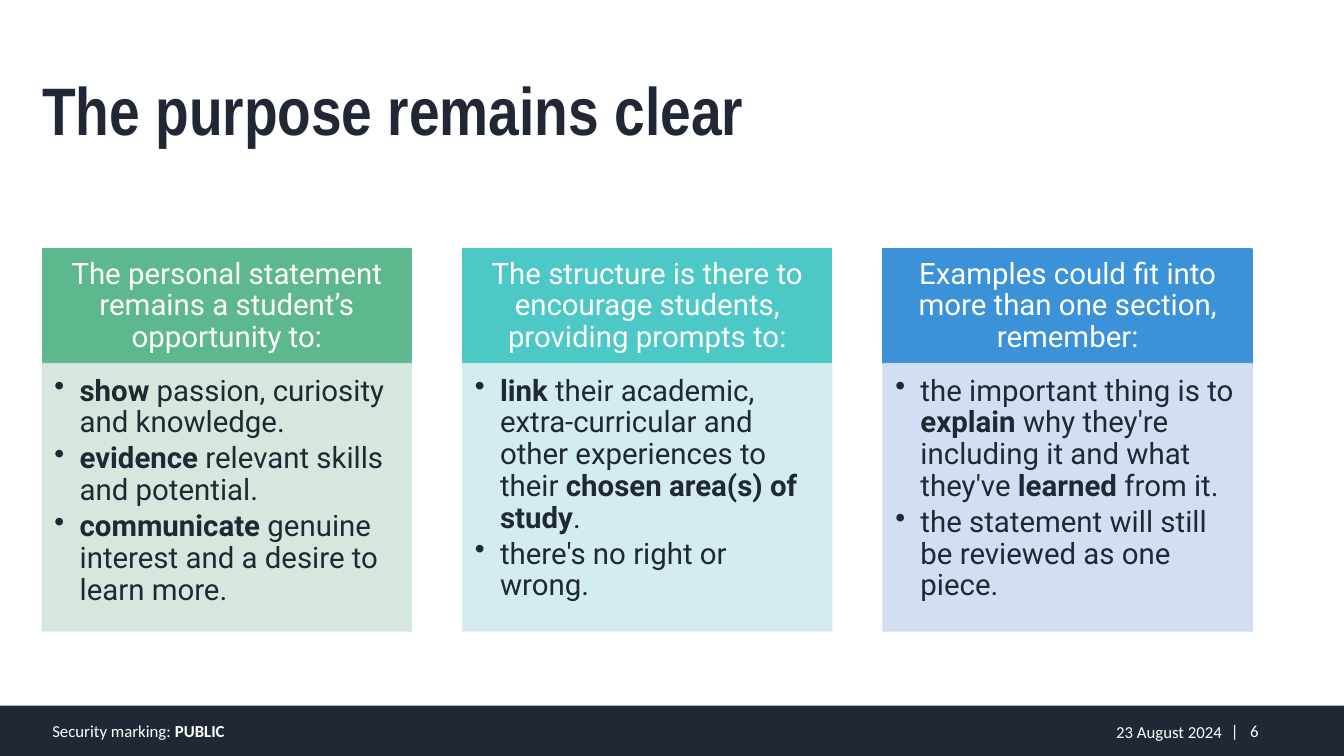
from lxml.etree import SubElement
from pptx import Presentation
from pptx.dml.color import RGBColor
from pptx.enum.shapes import MSO_SHAPE
from pptx.enum.text import MSO_ANCHOR, PP_ALIGN
from pptx.oxml.ns import qn
from pptx.util import Inches, Pt

NAVY = RGBColor(0x1F, 0x28, 0x34)
WHITE = RGBColor(0xFF, 0xFF, 0xFF)
GREEN = RGBColor(0x5D, 0xB8, 0x8D)
PALE_GREEN = RGBColor(0xD2, 0xE6, 0xDB)
TEAL = RGBColor(0x4C, 0xC8, 0xC7)
PALE_TEAL = RGBColor(0xD0, 0xEB, 0xEC)
BLUE = RGBColor(0x3B, 0x92, 0xD9)
PALE_BLUE = RGBColor(0xCE, 0xDC, 0xF1)

PAGE_WIDTH, PAGE_HEIGHT = 13.33, 7.5
MARGIN = 0.42
CARD_TOP, CARD_WIDTH, CARD_HEIGHT = 2.47, 3.66, 3.79
CARD_PITCH = 4.17
HEADER_SHARE = 0.3
INDENT = 0.25

CARDS = [
    (GREEN, PALE_GREEN, "The personal statement remains a student’s opportunity to:", [
        "**show** passion, curiosity and knowledge.",
        "**evidence** relevant skills and potential.",
        "**communicate** genuine interest and a desire to learn more.",
    ]),
    (TEAL, PALE_TEAL, "The structure is there to encourage students, providing prompts to:", [
        "**link** their academic, extra-curricular and other experiences to their "
        "**chosen area(s) of study**.",
        "there's no right or wrong.",
    ]),
    (BLUE, PALE_BLUE, "Examples could fit into more than one section, remember:", [
        "the important thing is to **explain **why they're including it and what "
        "they've **learned** from it.",
        "the statement will still be reviewed as one piece.",
    ]),
]


def write(shape, *lines, font, size, color, align=PP_ALIGN.LEFT, anchor=MSO_ANCHOR.MIDDLE,
          insets=(0.1, 0.05, 0.1, 0.05), wrap=True, line_spacing=1.0, after=0,
          bullet=False, tab=None):
    frame = shape.text_frame
    frame.word_wrap = wrap
    frame.vertical_anchor = anchor
    (frame.margin_left, frame.margin_top,
     frame.margin_right, frame.margin_bottom) = map(Inches, insets)
    for index, line in enumerate(lines):
        para = frame.add_paragraph() if index else frame.paragraphs[0]
        properties = para._p.get_or_add_pPr()
        if bullet:
            properties.set("marL", str(Inches(INDENT)))
            properties.set("indent", str(-Inches(INDENT)))
            SubElement(properties, qn("a:buChar"), char="•")
        if tab:
            stops = SubElement(properties, qn("a:tabLst"))
            SubElement(stops, qn("a:tab"), pos=str(Inches(tab)), algn="l")
        para.alignment = align
        para.line_spacing = line_spacing
        para.space_after = Pt(after)
        for part, text in enumerate(line.split("**")):
            if text:
                span = para.add_run()
                span.text = text
                span.font.name = font
                span.font.size = Pt(size)
                span.font.bold = part % 2 == 1
                span.font.color.rgb = color


def add_text(page, box, *lines, **style):
    write(page.shapes.add_textbox(*map(Inches, box)), *lines, **style)


def add_panel(page, box, color, outlined=True, opacity=100):
    panel = page.shapes.add_shape(MSO_SHAPE.RECTANGLE, *map(Inches, box))
    panel.shadow.inherit = False
    panel.fill.solid()
    panel.fill.fore_color.rgb = color
    if outlined:
        panel.line.color.rgb = color
        panel.line.width = Pt(1)
    else:
        panel.line.fill.background()
    if opacity < 100:
        for tint in panel._element.spPr.iter(qn("a:srgbClr")):
            SubElement(tint, qn("a:alpha"), val=str(opacity * 1000))
    return panel


def add_title(page, box):
    add_text(page, box, "**The purpose remains clear**", font="Arial Narrow", size=48,
             color=NAVY, anchor=MSO_ANCHOR.BOTTOM, insets=(0, 0, 0, 0), wrap=False,
             line_spacing=0.9)


def add_card(page, box, strong, pale, heading, points):
    left, top, width, height = box
    split = height * HEADER_SHARE
    style = dict(font="Roboto", size=21, line_spacing=0.9)
    header = add_panel(page, (left, top, width, split), strong)
    write(header, heading, color=WHITE, align=PP_ALIGN.CENTER,
          insets=(0.16, 0.09, 0.16, 0.09), **style)
    body = add_panel(page, (left, top + split, width, height - split), pale, opacity=90)
    write(body, *points, color=NAVY, anchor=MSO_ANCHOR.TOP, bullet=True, after=3.15,
          insets=(0.12, 0.12, 0.16, 0.18), **style)


def add_footer(page, box):
    left, top, width, height = box
    add_panel(page, box, NAVY, outlined=False)
    text_top, text_height = top + 0.09, height * 0.66
    style = dict(font="Calibri", size=12, color=WHITE, after=6)
    add_text(page, (left + MARGIN, text_top, width * 0.49, text_height),
             "Security marking: **PUBLIC**", **style)
    add_text(page, (left + 8.7, text_top, 3.42, text_height + 0.01), "23 August 2024",
             align=PP_ALIGN.RIGHT, insets=(0.1, 0.05, 0, 0.05), **style)
    add_text(page, (left + 12.11, text_top, 0.8, text_height), "|\t6", tab=0.19, **style)


def main():
    deck = Presentation()
    deck.slide_width, deck.slide_height = Inches(PAGE_WIDTH), Inches(PAGE_HEIGHT)
    page = deck.slides.add_slide(deck.slide_layouts[6])
    add_footer(page, (0, 7, PAGE_WIDTH, 0.5))
    add_title(page, (MARGIN, 0, 11.1, 1.49))
    for column, card in enumerate(CARDS):
        left = MARGIN + column * CARD_PITCH
        add_card(page, (left, CARD_TOP, CARD_WIDTH, CARD_HEIGHT), *card)
    deck.save("out.pptx")


if __name__ == "__main__":
    main()
